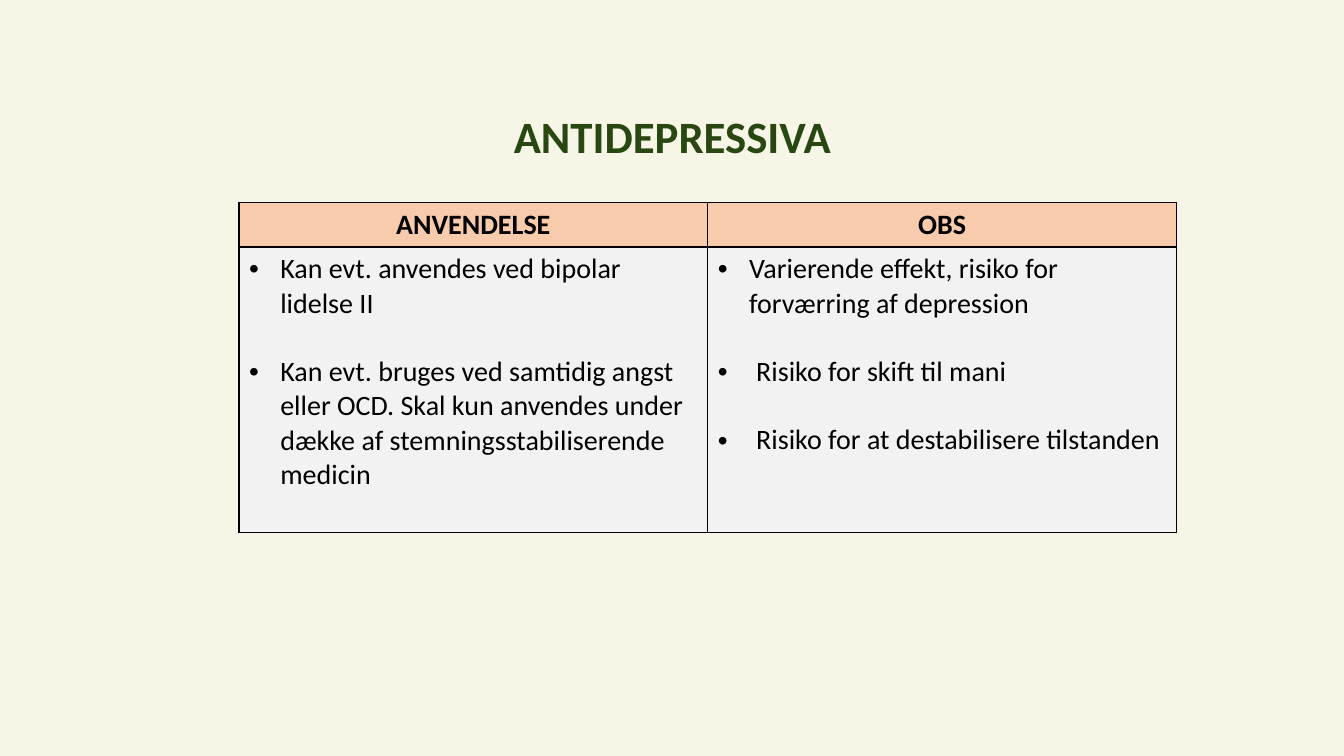
from pptx import Presentation
from pptx.dml.color import RGBColor
from pptx.enum.text import MSO_ANCHOR, MSO_AUTO_SIZE, PP_ALIGN
from pptx.oxml.ns import qn
from pptx.util import Inches, Pt
from lxml import etree

CENTER, LEFT = PP_ALIGN.CENTER, PP_ALIGN.LEFT
MIDDLE = MSO_ANCHOR.MIDDLE
NO_FIT = MSO_AUTO_SIZE.NONE

CREAM = RGBColor(0xF7, 0xF6, 0xE6)
GREEN = RGBColor(0x29, 0x47, 0x11)
PEACH = RGBColor(0xF8, 0xCB, 0xAD)
GREY = RGBColor(0xF2, 0xF2, 0xF2)
BLACK = RGBColor(0, 0, 0)

TITLE = {"name": "Calibri", "size": Pt(32), "bold": True}
HEAD = {"name": "Calibri", "size": Pt(20), "bold": True}
BODY = {"name": "Calibri", "size": Pt(20), "bold": False}

USES = [
    ("Kan evt. anvendes ved bipolar lidelse II", 0.31),
    ("Kan evt. bruges ved samtidig angst eller OCD. Skal kun anvendes under "
     "dække af stemningsstabiliserende medicin", 0.31),
]
RISKS = [
    ("Varierende effekt, risiko for forværring af depression", 0.31),
    ("Risiko for skift til mani", 0.38),
    ("Risiko for at destabilisere tilstanden", 0.38),
]
COLUMNS = [("ANVENDELSE", USES), ("OBS", RISKS)]


def style(font, form, color):
    for key, value in form.items():
        setattr(font, key, value)
    font.color.rgb = color


def write(para, text, form, color, align):
    para.alignment = align
    run = para.add_run()
    run.text = text
    style(run.font, form, color)


def bullet(para, indent):
    props = para._p.get_or_add_pPr()
    props.set("marL", str(Inches(indent)))
    props.set("indent", str(-Inches(indent)))
    etree.SubElement(props, qn("a:buFont"), typeface="Arial")
    etree.SubElement(props, qn("a:buChar"), char="•")


def paint(cell, color):
    props = cell._tc.get_or_add_tcPr()
    for side in ("lnL", "lnR", "lnT", "lnB"):
        line = etree.SubElement(props, qn("a:" + side), w=str(Pt(1)))
        solid = etree.SubElement(line, qn("a:solidFill"))
        etree.SubElement(solid, qn("a:srgbClr"), val=str(BLACK))
    cell.fill.solid()
    cell.fill.fore_color.rgb = color


def add_title(slide, left, top, width, height):
    title = slide.shapes.title
    title.left, title.top = Inches(left), Inches(top)
    title.width, title.height = Inches(width), Inches(height)
    frame = title.text_frame
    frame.auto_size = NO_FIT
    frame.vertical_anchor = MIDDLE
    para = frame.paragraphs[0]
    para.line_spacing = 0.9
    write(para, "ANTIDEPRESSIVA", TITLE, GREEN, CENTER)


def add_grid(slide, left, top, width, height):
    box = [Inches(n) for n in (left, top, width, height)]
    table = slide.shapes.add_table(2, len(COLUMNS), *box).table
    head = 0.43
    table.rows[0].height = Inches(head)
    table.rows[1].height = Inches(height - head)
    for col, (name, points) in enumerate(COLUMNS):
        table.columns[col].width = Inches(width / len(COLUMNS))
        top_cell, cell = table.cell(0, col), table.cell(1, col)
        paint(top_cell, PEACH)
        paint(cell, GREY)
        write(top_cell.text_frame.paragraphs[0], name, HEAD, BLACK, CENTER)
        frame = cell.text_frame
        for row, (text, indent) in enumerate(points):
            para = frame.add_paragraph() if row else frame.paragraphs[0]
            bullet(para, indent)
            if row:
                para.space_before = Pt(24.4)
            write(para, text, BODY, BLACK, LEFT)


def main():
    deck = Presentation()
    deck.slide_width, deck.slide_height = Inches(13.33), Inches(7.5)
    slide = deck.slides.add_slide(deck.slide_layouts[5])
    fill = slide.background.fill
    fill.solid()
    fill.fore_color.rgb = CREAM
    add_title(slide, 0.92, 0.96, 11.5, 0.84)
    add_grid(slide, 2.37, 2.01, 9.3, 3.26)
    deck.save("out.pptx")


if __name__ == "__main__":
    main()
